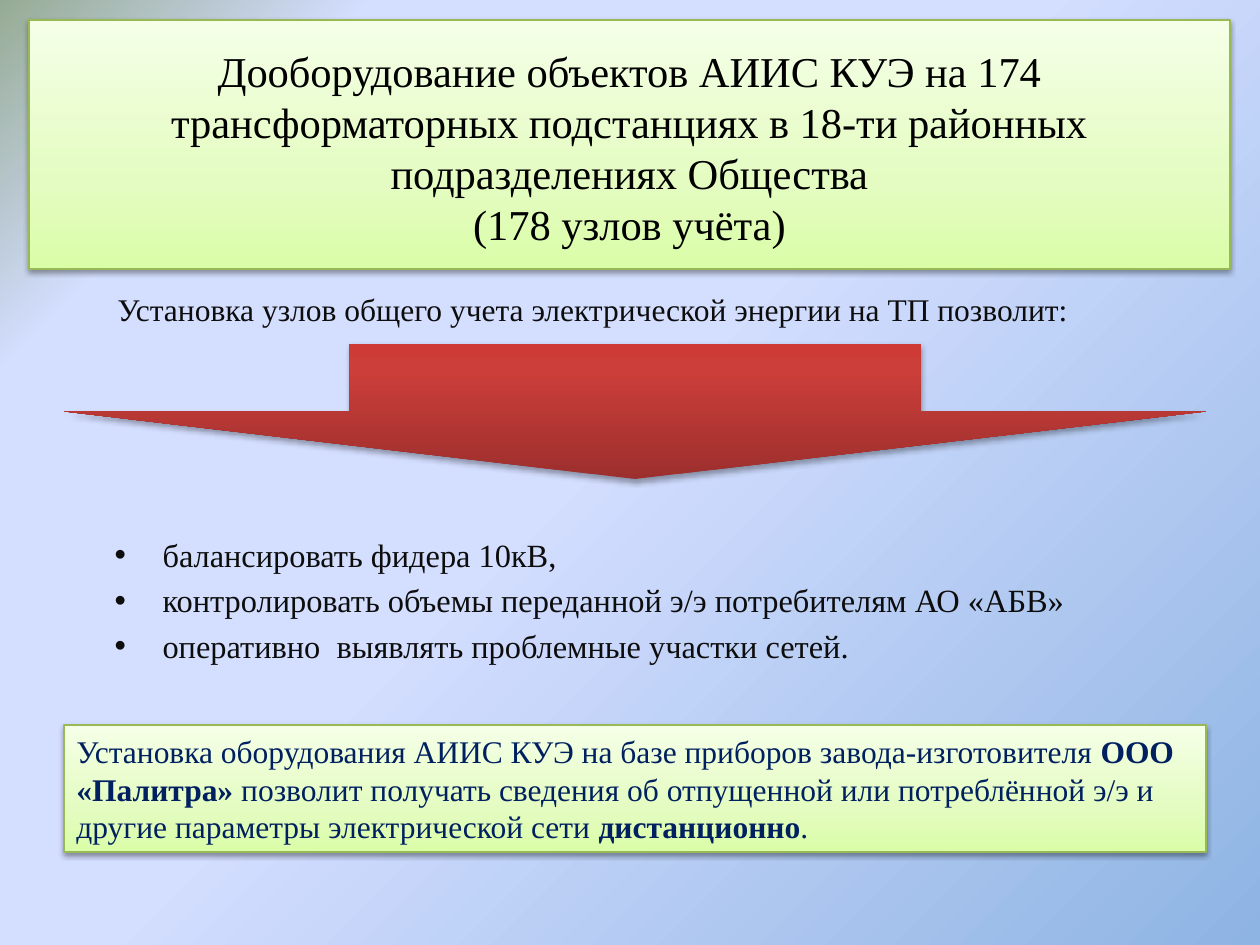
"""Builds the slide on extending metering at transformer substations."""
from lxml import etree
from pptx import Presentation
from pptx import util as u
from pptx.dml.color import RGBColor
from pptx.enum import shapes, text
from pptx.oxml.ns import qn

PX = u.Inches(1) // 126
FONT = "Times New Roman"
BLACK = RGBColor(0x00, 0x00, 0x00)
INK = RGBColor(0x0D, 0x0D, 0x0D)
NAVY = RGBColor(0x00, 0x20, 0x60)
GREEN_EDGE = RGBColor(0x98, 0xB9, 0x55)
SKY = RGBColor(0x8E, 0xB4, 0xE3)
LAVENDER = RGBColor(0xD4, 0xDE, 0xFF)
SAGE = RGBColor(0x96, 0xAB, 0x94)
GREEN_STOPS = [(0, RGBColor(0xDA, 0xFD, 0xA7)), (35, RGBColor(0xE4, 0xFC, 0xC2)),
               (100, RGBColor(0xF5, 0xFF, 0xE7))]
RED_STOPS = [(0, RGBColor(0x9C, 0x2F, 0x2D)), (80, RGBColor(0xCB, 0x3E, 0x3A)),
             (100, RGBColor(0xCE, 0x3B, 0x37))]
SKY_STOPS = [(0, SKY), (53, LAVENDER), (83, LAVENDER), (100, SAGE)]

HEADING = ["Дооборудование объектов АИИС КУЭ на 174 трансформаторных подстанциях "
           "в 18-ти районных подразделениях Общества", "(178 узлов учёта)"]
LEAD_IN = "Установка узлов общего учета электрической энергии на ТП позволит:"
BENEFITS = ["балансировать фидера 10кВ,",
            "контролировать объемы переданной э/э потребителям АО «АБВ»",
            "оперативно  выявлять проблемные участки сетей."]
SUMMARY = [("Установка оборудования АИИС КУЭ на базе приборов завода-изготовителя ", False),
           ("ООО «Палитра» ", True),
           ("позволит получать сведения об отпущенной или потреблённой э/э и другие "
            "параметры электрической сети ", False),
           ("дистанционно", True), (".", False)]


def px(*lengths):
    return [n * PX for n in lengths]


def add_node(parent, tag, **attributes):
    return etree.SubElement(parent, qn(tag), {k: str(v) for k, v in attributes.items()})


def set_gradient(fill, owner, stops, radial=False):
    fill.gradient()
    gradient = owner.find(".//" + qn("a:gradFill"))
    gradient.clear()
    stop_list = add_node(gradient, "a:gsLst")
    for position, color in stops:
        add_node(add_node(stop_list, "a:gs", pos=position * 1000), "a:srgbClr", val=color)
    if radial:
        circle = add_node(gradient, "a:path", path="circle")
        add_node(circle, "a:fillToRect", l=100000, t=100000)
    else:
        add_node(gradient, "a:lin", ang=270 * 60000, scaled=0)


def set_shadow(shape, opacity, distance):
    shape.shadow.inherit = False
    effects = shape._element.spPr.find(qn("a:effectLst"))
    outer = add_node(effects, "a:outerShdw", blurRad=u.Pt(3.1), dist=u.Pt(distance),
                     dir=90 * 60000, rotWithShape=0)
    add_node(add_node(outer, "a:srgbClr", val=BLACK), "a:alpha", val=opacity * 1000)


def style_green_panel(panel):
    set_gradient(panel.fill, panel._element.spPr, GREEN_STOPS)
    panel.line.color.rgb = GREEN_EDGE
    panel.line.width = u.Pt(0.75)
    set_shadow(panel, 38, 1.6)


def place(shape, left, top, width, height):
    shape.left, shape.top, shape.width, shape.height = px(left, top, width, height)


def prepare_frame(shape, anchor):
    frame = shape.text_frame
    frame.word_wrap = True
    frame.auto_size = text.MSO_AUTO_SIZE.NONE
    frame.vertical_anchor = anchor
    return frame


def add_run(paragraph, words, size, color, bold=False):
    run = paragraph.add_run()
    run.text = words
    run.font.name = FONT
    run.font.size = u.Pt(size)
    run.font.bold = bold
    run.font.color.rgb = color


def fill_heading(heading):
    place(heading, 29, 20, 1201, 249)
    style_green_panel(heading)
    frame = prepare_frame(heading, text.MSO_ANCHOR.MIDDLE)
    frame.margin_top = 12 * PX
    paragraph = frame.paragraphs[0]
    paragraph.alignment = text.PP_ALIGN.CENTER
    for index, line in enumerate(HEADING):
        if index:
            paragraph.add_line_break()
        add_run(paragraph, line, 24.3, BLACK)


def fill_benefits(benefits):
    place(benefits, 39, 479, 1191, 183)
    frame = prepare_frame(benefits, text.MSO_ANCHOR.TOP)
    frame.margin_top = 56 * PX
    for index, benefit in enumerate(BENEFITS):
        paragraph = frame.add_paragraph() if index else frame.paragraphs[0]
        paragraph.level = 1
        paragraph.alignment = text.PP_ALIGN.LEFT
        paragraph.space_before = u.Pt(3.7)
        properties = paragraph._p.get_or_add_pPr()
        properties.set("marL", str(111 * PX))
        properties.set("indent", str(-48 * PX))
        add_node(properties, "a:buFont", typeface="Arial")
        add_node(properties, "a:buChar", char="•")
        add_run(paragraph, benefit, 18.5, INK)


def add_arrow(slide):
    arrow = slide.shapes.add_shape(shapes.MSO_SHAPE.DOWN_ARROW, *px(64, 344, 1142, 135))
    set_gradient(arrow.fill, arrow._element.spPr, RED_STOPS)
    arrow.line.fill.background()
    set_shadow(arrow, 35, 1.8)


def add_lead_in(slide):
    lead_in = slide.shapes.add_textbox(*px(105, 284, 1052, 50))
    frame = prepare_frame(lead_in, text.MSO_ANCHOR.TOP)
    add_run(frame.paragraphs[0], LEAD_IN, 18, INK)


def add_summary(slide):
    summary = slide.shapes.add_shape(shapes.MSO_SHAPE.RECTANGLE, *px(64, 725, 1142, 127))
    style_green_panel(summary)
    paragraph = prepare_frame(summary, text.MSO_ANCHOR.MIDDLE).paragraphs[0]
    paragraph.alignment = text.PP_ALIGN.LEFT
    for words, bold in SUMMARY:
        add_run(paragraph, words, 18, NAVY, bold)


def main():
    deck = Presentation()
    deck.slide_width, deck.slide_height = px(1260, 945)
    slide = deck.slides.add_slide(deck.slide_layouts[0])
    set_gradient(slide.background.fill, slide._element, SKY_STOPS, radial=True)
    fill_heading(slide.shapes.title)
    fill_benefits(slide.placeholders[1])
    add_arrow(slide)
    add_lead_in(slide)
    add_summary(slide)
    deck.save("out.pptx")


if __name__ == "__main__":
    main()
